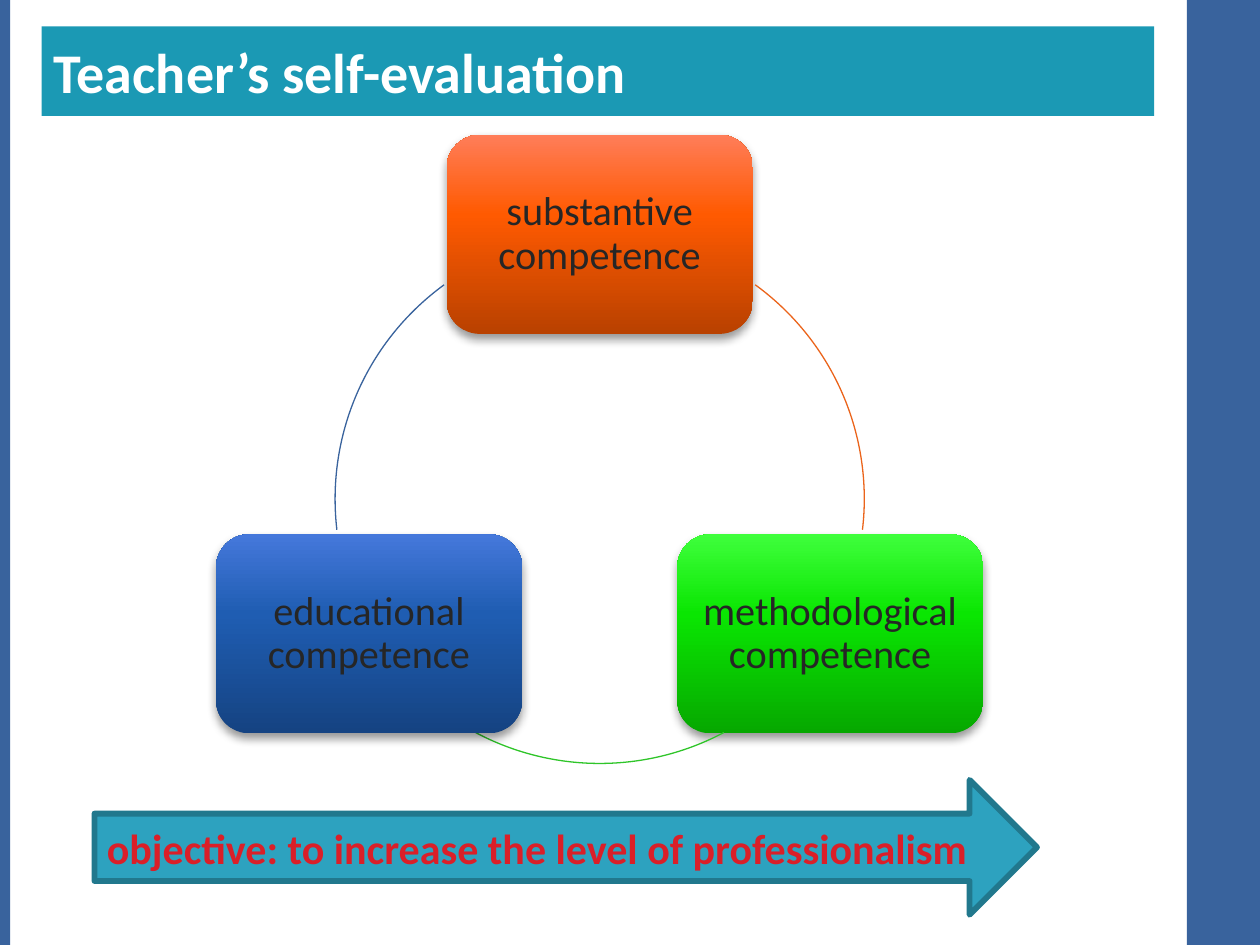
"""Build the slide on the three competences in a teacher's self-evaluation."""
from copy import deepcopy

from lxml.etree import SubElement
from pptx import Presentation
from pptx.dml.color import RGBColor
from pptx.enum.shapes import MSO_SHAPE as Shape
from pptx.enum.text import MSO_ANCHOR as Anchor, PP_ALIGN as Align
from pptx.oxml.ns import qn
from pptx.util import Inches, Pt

BLUE = RGBColor(0x39, 0x63, 0x9D)
TEAL = RGBColor(0x1B, 0x99, 0xB4)
ARROW_FILL = RGBColor(0x2D, 0xA2, 0xBF)
ARROW_EDGE = RGBColor(0x21, 0x78, 0x8D)
RED = RGBColor(0xDA, 0x1F, 0x28)
WHITE = RGBColor(0xFF, 0xFF, 0xFF)
INK = RGBColor(0x26, 0x26, 0x26)
ORANGE_LINE = RGBColor(0xEB, 0x64, 0x1B)
GREEN_LINE = RGBColor(0x2F, 0xC5, 0x29)
ORANGES = [RGBColor(0xB9, 0x41, 0x00), RGBColor(0xFF, 0x5A, 0x01), RGBColor(0xFF, 0x7D, 0x59)]
GREENS = [RGBColor(0x06, 0xA8, 0x00), RGBColor(0x0A, 0xE6, 0x02), RGBColor(0x3F, 0xFF, 0x3C)]
BLUES = [RGBColor(0x15, 0x43, 0x82), RGBColor(0x1F, 0x5D, 0xB2), RGBColor(0x45, 0x78, 0xDB)]

CENTER_X, CENTER_Y, RADIUS = 4.76, 3.96, 2.1
CARD_W, CARD_H = 2.43, 1.58
LOWER_OFFSET, UPPER_Y, LOWER_Y = 1.83, 1.07, 4.24


def add_block(slide, kind, left, top, width, height, fill=None):
    block = slide.shapes.add_shape(kind, Inches(left), Inches(top), Inches(width), Inches(height))
    block.shadow.inherit = False
    block.line.fill.background()
    if fill is None:
        block.fill.background()
    else:
        block.fill.solid()
        block.fill.fore_color.rgb = fill
    return block


def write(block, text, size, color, bold=False, align=Align.LEFT):
    frame = block.text_frame
    frame.word_wrap = True
    frame.vertical_anchor = Anchor.MIDDLE
    frame.text = text
    paragraph = frame.paragraphs[0]
    paragraph.alignment = align
    font = paragraph.runs[0].font
    font.name, font.size, font.bold = "Calibri", Pt(size), bold
    font.color.rgb = color
    return paragraph


def shade(card, colors):
    card.fill.gradient()
    card.fill.gradient_angle = 90
    stop_list = card._element.spPr.find(".//" + qn("a:gsLst"))
    stop_list.append(deepcopy(stop_list[-1]))
    for stop, color, position in zip(card.fill.gradient_stops, colors, (0, 0.6, 1)):
        stop.color.rgb = color
        stop.position = position


def drop_shadow(card):
    effects = card._element.spPr.find(qn("a:effectLst"))
    shadow = SubElement(effects, qn("a:outerShdw"), blurRad=str(Pt(5.2)), dist=str(Pt(3)),
                        dir="5400000", rotWithShape="0")
    color = SubElement(shadow, qn("a:srgbClr"), val="000000")
    SubElement(color, qn("a:alpha"), val="40000")


def add_competence(slide, text, offset, top, colors):
    card = add_block(slide, Shape.ROUNDED_RECTANGLE, CENTER_X + offset - CARD_W / 2, top,
                     CARD_W, CARD_H)
    shade(card, colors)
    drop_shadow(card)
    card.text_frame.margin_left = card.text_frame.margin_right = Inches(0.02)
    write(card, text, 23, INK, align=Align.CENTER).line_spacing = 0.9


def add_arc(slide, start, end, color):
    arc = add_block(slide, Shape.ARC, CENTER_X - RADIUS, CENTER_Y - RADIUS, 2 * RADIUS, 2 * RADIUS)
    arc.adjustments[0], arc.adjustments[1] = start * 0.6, end * 0.6
    arc.line.color.rgb = color
    arc.line.width = Pt(0.75)


def main():
    deck = Presentation()
    deck.slide_width, deck.slide_height = Inches(10), Inches(7.5)
    slide = deck.slides.add_slide(deck.slide_layouts[6])

    for left, width in ((9.42, 0.58), (0, 0.08)):
        add_block(slide, Shape.RECTANGLE, left, 0, width, 7.5, BLUE)

    add_competence(slide, "substantive competence", 0, UPPER_Y, ORANGES)
    add_arc(slide, 306, 6.7, ORANGE_LINE)
    add_competence(slide, "methodological competence", LOWER_OFFSET, LOWER_Y, GREENS)
    add_arc(slide, 62, 118, GREEN_LINE)
    add_competence(slide, "educational competence", -LOWER_OFFSET, LOWER_Y, BLUES)
    add_arc(slide, 173.3, 234, BLUE)

    title = add_block(slide, Shape.RECTANGLE, 0.33, 0.21, 8.83, 0.71, TEAL)
    write(title, "Teacher’s self-evaluation", 32, WHITE, bold=True)

    objective = add_block(slide, Shape.RIGHT_ARROW, 0.75, 6.19, 7.48, 1.07, ARROW_FILL)
    objective.line.color.rgb = ARROW_EDGE
    objective.line.width = Pt(3.35)
    write(objective, "objective: to increase the level of professionalism", 24, RED, bold=True)

    deck.save("out.pptx")


if __name__ == "__main__":
    main()
